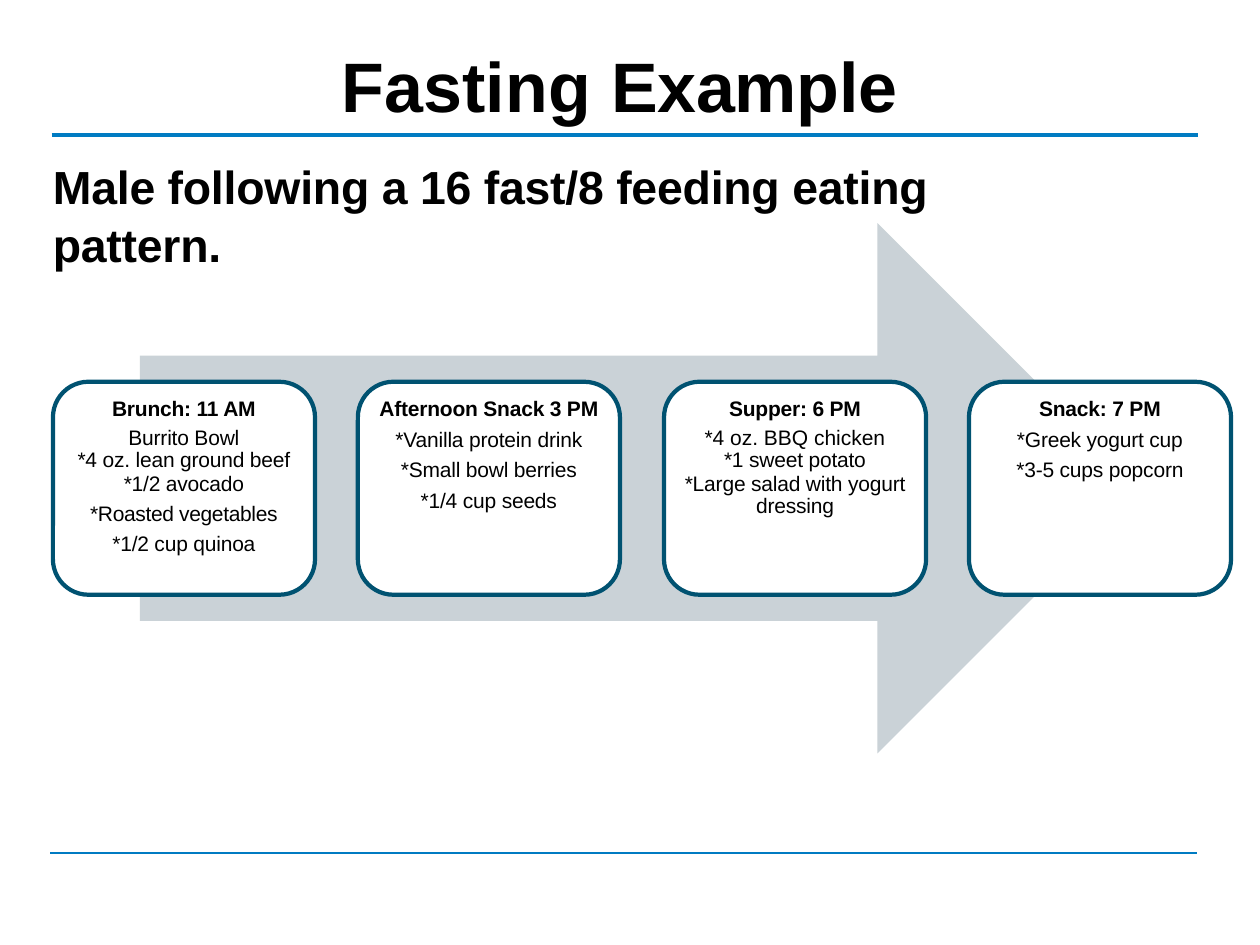
from typing import NamedTuple

from lxml.etree import SubElement
from pptx import Presentation
from pptx.dml.color import RGBColor as Rgb
from pptx.enum.shapes import MSO_CONNECTOR as Conn, MSO_SHAPE as Kind
from pptx.enum.text import MSO_ANCHOR as Anchor, PP_ALIGN as Align
from pptx.oxml.ns import qn
from pptx.util import Pt

SCALE = 9144  # EMU in one px, 100 px to the inch
FONT = "Arial"
HUES = {"text": "000000", "rule": "007BC2", "arrow": "CAD2D7",
        "card": "FFFFFF", "edge": "005271"}


class Line(NamedTuple):
    text: str
    before: float = 0  # space above, points
    pitch: float = 0   # fixed line height, points
    track: int = -10   # letter spacing, 1/100 point


class Meal(NamedTuple):
    head: str
    foods: list[Line]


class Rule(NamedTuple):
    left: int
    top: int
    width: int
    weight: float


MEALS = [
    Meal("Brunch: 11 AM", [
        Line("Burrito Bowl", 3.2, 13.2),
        Line("*4 oz. lean ground beef", 0, 12.4),
        Line("*1/2 avocado", 0, 13.6),
        Line("*Roasted vegetables", 3.2, 0, -20),
        Line("*1/2 cup quinoa", 2.4)]),
    Meal("Afternoon Snack 3 PM", [
        Line("*Vanilla protein drink", 3.2),
        Line("*Small bowl berries", 2.5),
        Line("*1/4 cup seeds", 3.2)]),
    Meal("Supper: 6 PM", [
        Line("*4 oz. BBQ chicken", 3.2, 13.2, 0),
        Line("*1 sweet potato", 0, 12.4),
        Line("*Large salad with yogurt dressing", 1, 12.8)]),
    Meal("Snack: 7 PM", [
        Line("*Greek yogurt cup", 3.2),
        Line("*3-5 cups popcorn", 2.5)]),
]
RULES = [Rule(41, 107, 910, 2.4), Rule(40, 677, 910, 1.6)]


def px(*nums: float) -> list[int]:
    return [round(n * SCALE) for n in nums]


def hue(name: str) -> Rgb:
    return Rgb.from_string(HUES[name])


def set_frame(frame, left: int, top: int) -> None:
    frame.word_wrap = True
    frame.vertical_anchor = Anchor.TOP
    frame.margin_left, frame.margin_top = px(left, top)
    frame.margin_right, frame.margin_bottom = px(left, 0)


def add_run(para, text: str, size: float, bold: bool, track: int) -> None:
    run = para.add_run()
    run.text = text
    font = run.font
    font.name, font.size, font.bold = FONT, Pt(size), bold
    font.color.rgb = hue("text")
    run._r.get_or_add_rPr().set("spc", str(track))


def draw_rule(slide, rule: Rule) -> None:
    x, y, end = px(rule.left, rule.top, rule.left + rule.width)
    line = slide.shapes.add_connector(Conn.STRAIGHT, x, y, end, y)
    line.line.color.rgb = hue("rule")
    line.line.width = Pt(rule.weight)
    SubElement(line._element.spPr, qn("a:effectLst"))


def draw_card(slide, meal: Meal, left: int) -> None:
    card = slide.shapes.add_shape(Kind.ROUNDED_RECTANGLE,
                                  *px(left, 303, 208, 169))
    card.shadow.inherit = False
    card.fill.solid()
    card.fill.fore_color.rgb = hue("card")
    card.line.color.rgb = hue("edge")
    card.line.width = Pt(2.4)
    frame = card.text_frame
    set_frame(frame, 6, 3)
    para = frame.paragraphs[0]
    para.alignment = Align.CENTER
    add_run(para, meal.head, 12, True, -10)
    for food in meal.foods:
        para = frame.add_paragraph()
        para.alignment = Align.CENTER
        para.space_before = Pt(food.before)
        if food.pitch:
            para.line_spacing = Pt(food.pitch)
        add_run(para, food.text, 12, False, food.track)


def main() -> None:
    deck = Presentation()
    deck.slide_width, deck.slide_height = px(1000, 750)
    slide = deck.slides.add_slide(deck.slide_layouts[5])

    # Title and rules
    title = slide.shapes.title
    title.left, title.top, title.width, title.height = px(271, 27, 445, 70)
    set_frame(title.text_frame, 0, 7)
    para = title.text_frame.paragraphs[0]
    para.alignment = Align.LEFT
    add_run(para, "Fasting ", 40, True, 10)
    add_run(para, "Example", 40, True, -10)
    for rule in RULES:
        draw_rule(slide, rule)

    # Arrow behind the meals
    arrow = slide.shapes.add_shape(Kind.RIGHT_ARROW, *px(111, 177, 796, 421))
    arrow.shadow.inherit = False
    arrow.fill.solid()
    arrow.fill.fore_color.rgb = hue("arrow")
    arrow.line.fill.background()

    # Meal cards, evenly spread
    first, last = 42, 769
    step = (last - first) / (len(MEALS) - 1)
    for i, meal in enumerate(MEALS):
        draw_card(slide, meal, round(first + i * step))

    # Lead sentence
    lead = slide.shapes.add_textbox(*px(42, 119, 837, 47))
    set_frame(lead.text_frame, 0, 4)
    para = lead.text_frame.paragraphs[0]
    para.line_spacing = 1.05
    add_run(para, "Male following a 16 fast/8 feeding eating pattern.",
            26.5, True, -15)

    deck.save("out.pptx")


if __name__ == "__main__":
    main()
